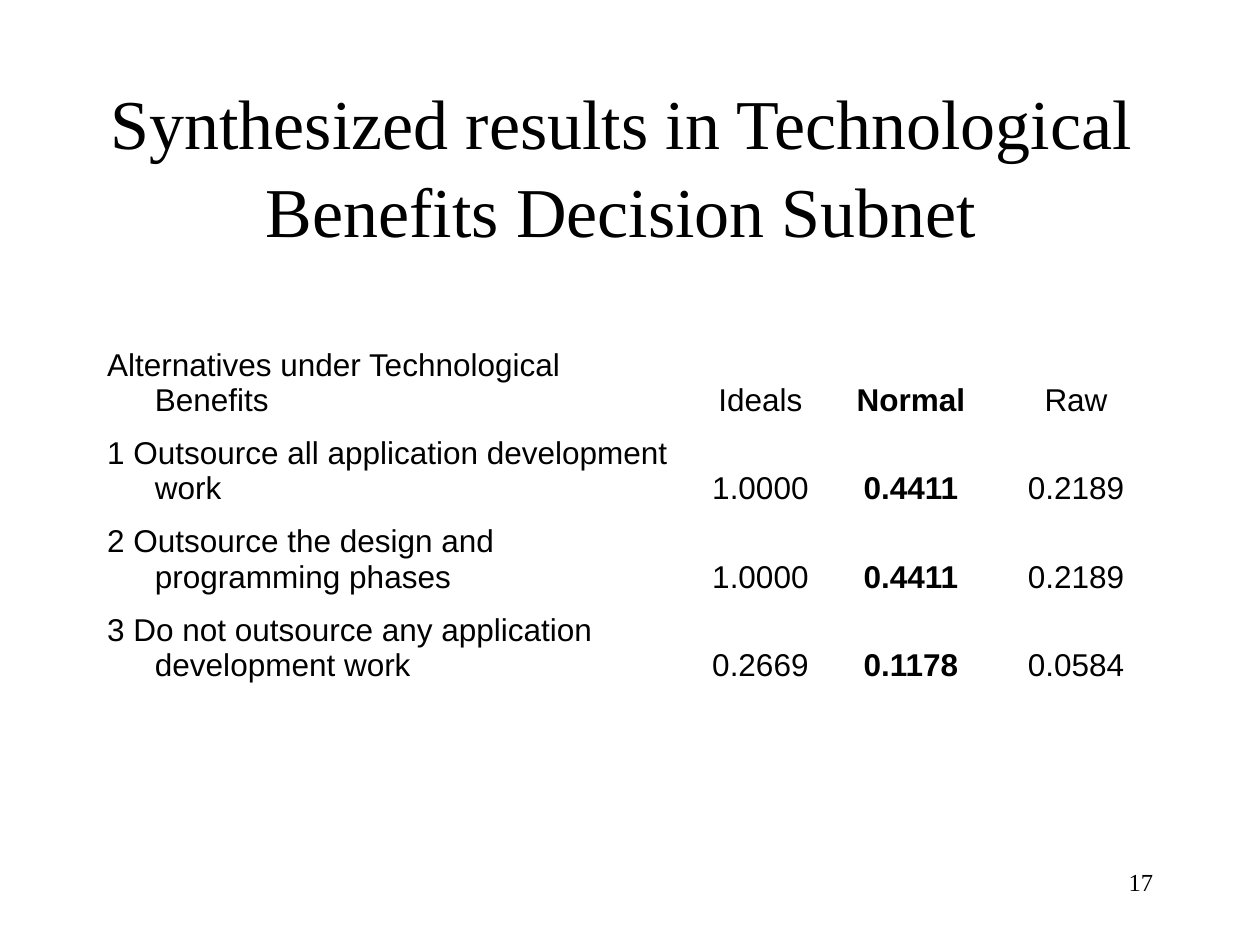
from dataclasses import dataclass

from pptx import Presentation
from pptx import util as u
from pptx.dml import color
from pptx.enum import text

ALIGN = text.PP_ALIGN
ANCHOR = text.MSO_ANCHOR


@dataclass(frozen=True)
class Theme:
    """Fonts, colours and type sizes of the slide."""
    serif: str = "Times New Roman"
    sans: str = "Arial"
    ink: str = "000000"
    paper: str = "FFFFFF"
    title_size: int = 40
    table_size: int = 18
    number_size: int = 14


THEME = Theme()
WIDTH, HEIGHT = 10, 7.5
MARGIN = 0.75
CONTENT_WIDTH = WIDTH - 2 * MARGIN
TITLE = "Synthesized results in Technological \vBenefits Decision Subnet "
COLUMN_WIDTHS = (4.68, 1.21, 1.18, 1.44)
ROW_HEIGHT = 0.7
HANGING = 0.38
BOLD_COLUMN = 2
RESULTS = (
    ("Alternatives under Technological Benefits", "Ideals", "Normal", "Raw"),
    ("1 Outsource all application development work", "1.0000", "0.4411", "0.2189"),
    ("2 Outsource the design and programming phases", "1.0000", "0.4411", "0.2189"),
    ("3 Do not outsource any application development work", "0.2669", "0.1178", "0.0584"),
)


def write_text(frame, content, *, font, size, align=ALIGN.LEFT, bold=False, spacing=1.0):
    """Fill a text frame with one formatted paragraph and return it."""
    frame.word_wrap = True
    paragraph = frame.paragraphs[0]
    paragraph.text = content
    paragraph.alignment = align
    paragraph.line_spacing = spacing
    for run in paragraph.runs:
        run.font.name = font
        run.font.size = u.Pt(size)
        run.font.bold = bold
        run.font.color.rgb = color.RGBColor.from_string(THEME.ink)
    return paragraph


def place_title(slide):
    """Move the title placeholder into position and write the heading."""
    title = slide.shapes.title
    title.left, title.top = u.Inches(MARGIN), u.Inches(0.67)
    title.width, title.height = u.Inches(CONTENT_WIDTH), u.Inches(1.25)
    title.text_frame.auto_size = text.MSO_AUTO_SIZE.NONE
    title.text_frame.vertical_anchor = ANCHOR.MIDDLE
    write_text(title.text_frame, TITLE, font=THEME.serif, size=THEME.title_size,
               align=ALIGN.CENTER, spacing=1.05)


def fill_cell(cell, content, column):
    """Write one table cell with a hanging indent at the cell's bottom."""
    cell.fill.background()
    cell.vertical_anchor = ANCHOR.BOTTOM
    paragraph = write_text(cell.text_frame, content, font=THEME.sans, size=THEME.table_size,
                           align=ALIGN.CENTER if column else ALIGN.LEFT,
                           bold=column == BOLD_COLUMN)
    properties = paragraph._p.get_or_add_pPr()
    properties.set("marL", str(u.Inches(HANGING)))
    properties.set("indent", str(-u.Inches(HANGING)))


def add_results_table(slide):
    """Add the plain table of synthesized results."""
    frame = slide.shapes.add_table(
        len(RESULTS), len(COLUMN_WIDTHS), u.Inches(MARGIN), u.Inches(2.67),
        u.Inches(sum(COLUMN_WIDTHS)), u.Inches(ROW_HEIGHT * len(RESULTS)))
    table = frame.table
    table.first_row = table.horz_banding = False
    table._tbl.tblPr.find("{*}tableStyleId").text = "{2D5ABB26-0587-4C30-8999-92F81FD0307C}"
    for column, width in zip(table.columns, COLUMN_WIDTHS):
        column.width = u.Inches(width)
    for row, values in enumerate(RESULTS):
        for column, content in enumerate(values):
            fill_cell(table.cell(row, column), content, column)


def add_page_number(slide, number):
    """Add the page number flush with the right margin."""
    width = CONTENT_WIDTH * 0.245
    box = slide.shapes.add_textbox(u.Inches(WIDTH - MARGIN - width), u.Inches(6.83),
                                   u.Inches(width), u.Inches(0.5))
    write_text(box.text_frame, str(number), font=THEME.serif, size=THEME.number_size,
               align=ALIGN.RIGHT)


def main():
    """Build the slide and save it."""
    presentation = Presentation()
    presentation.slide_width = u.Inches(WIDTH)
    presentation.slide_height = u.Inches(HEIGHT)
    slide = presentation.slides.add_slide(presentation.slide_layouts.get_by_name("Title Only"))
    slide.background.fill.solid()
    slide.background.fill.fore_color.rgb = color.RGBColor.from_string(THEME.paper)
    add_page_number(slide, 17)
    place_title(slide)
    add_results_table(slide)
    presentation.save("out.pptx")


if __name__ == "__main__":
    main()
